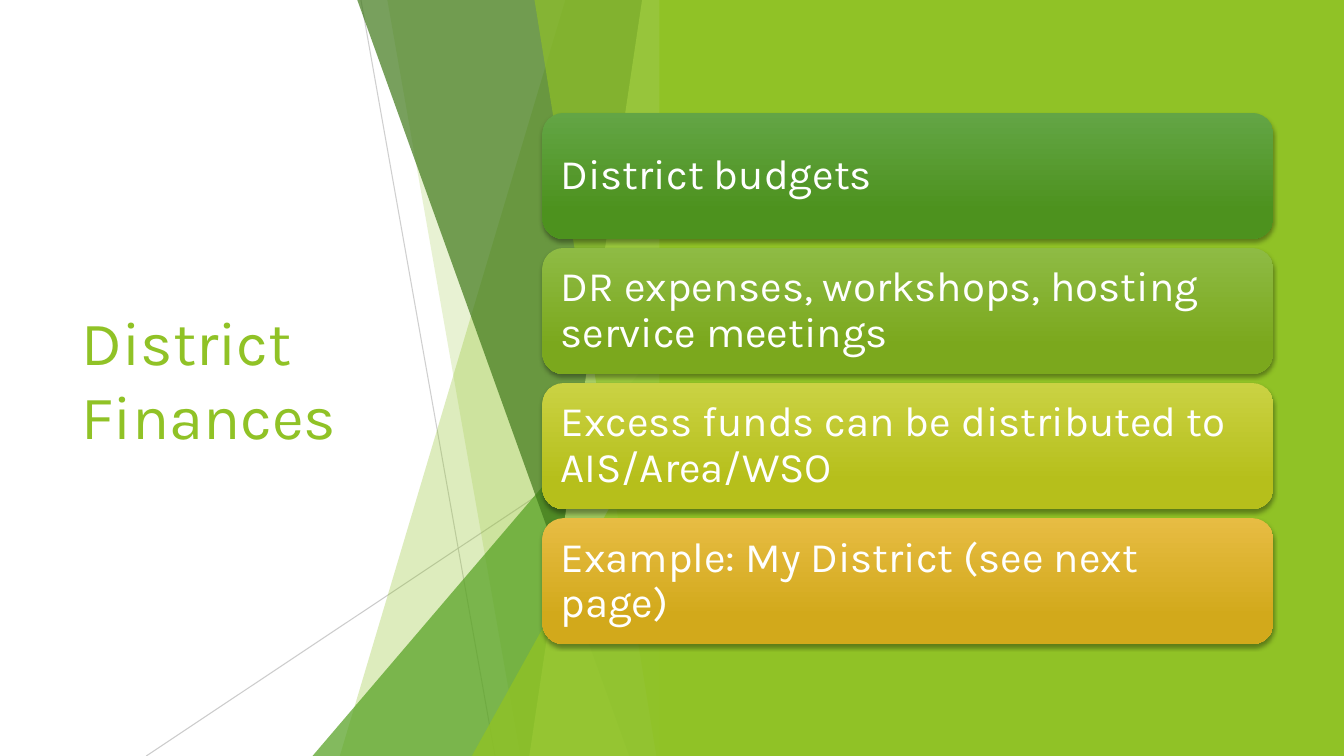
from lxml.etree import SubElement
from pptx import Presentation
from pptx.dml.color import RGBColor
from pptx.enum.shapes import MSO_CONNECTOR, MSO_SHAPE
from pptx.enum.text import MSO_ANCHOR, MSO_AUTO_SIZE, PP_ALIGN
from pptx.oxml.ns import qn
from pptx.util import Inches, Pt

FONT = "Karla"
LIME = "90C226"
WHITE = "FFFFFF"
WIDTH, HEIGHT = 13.33, 7.5
FACET_RIGHT = 6.66


def color(value):
    return RGBColor.from_string(value)


def set_opacity(shape, percent):
    for node in shape.element.spPr.iter(qn("a:srgbClr")):
        SubElement(node, qn("a:alpha"), val=str(percent * 1000))


class SlideBuilder:
    """Holds the page and its style, and draws each kind of element."""

    def __init__(self, page):
        self.page = page
        self.shapes = page.shapes

    def add_text(self, frame, text, size, text_color):
        frame.word_wrap = True
        frame.auto_size = MSO_AUTO_SIZE.NONE
        frame.vertical_anchor = MSO_ANCHOR.MIDDLE
        para = frame.paragraphs[0]
        para.alignment = PP_ALIGN.LEFT
        span = para.add_run()
        span.text = text
        span.font.name = FONT
        span.font.size = Pt(size)
        span.font.color.rgb = color(text_color)
        return para

    def title(self, text, left, top, width, height):
        box = self.shapes.title
        box.left, box.top = Inches(left), Inches(top)
        box.width, box.height = Inches(width), Inches(height)
        self.add_text(box.text_frame, text, 44, LIME)

    def paint(self, shape, fill, opacity=100):
        shape.shadow.inherit = False
        shape.fill.solid()
        shape.fill.fore_color.rgb = color(fill)
        shape.line.fill.background()
        if opacity < 100:
            set_opacity(shape, opacity)

    def preset(self, kind, left, top, width, height):
        return self.shapes.add_shape(
            kind, Inches(left), Inches(top), Inches(width), Inches(height))

    def hairline(self, start, end, opacity):
        line = self.shapes.add_connector(
            MSO_CONNECTOR.STRAIGHT, *(Inches(v) for v in (*start, *end)))
        line.line.width = Pt(0.75)
        line.line.color.rgb = color("BFBFBF")
        set_opacity(line, opacity)
        SubElement(line.element.spPr, qn("a:effectLst"))

    def facet(self, top_left, bottom_left, fill, opacity):
        """Full-height band with a slanted left edge."""
        top = -0.01
        corners = [(top_left, top), (FACET_RIGHT, top),
                   (FACET_RIGHT, HEIGHT), (bottom_left, HEIGHT)]
        points = [(Inches(x), Inches(y)) for x, y in corners]
        builder = self.shapes.build_freeform(*points[0])
        builder.add_line_segments(points[1:], close=True)
        self.paint(builder.convert_to_shape(), fill, opacity)

    def corner(self, left, top, fill, opacity):
        """Triangle rising to the right, standing on the bottom edge."""
        shape = self.preset(MSO_SHAPE.ISOSCELES_TRIANGLE, left, top,
                            FACET_RIGHT - left, HEIGHT - top)
        shape.adjustments[0] = 1
        self.paint(shape, fill, opacity)

    def panel(self, left, fill):
        self.paint(self.preset(MSO_SHAPE.RECTANGLE, left, 0,
                               WIDTH - left, HEIGHT), fill)

    def card(self, text, left, top, width, height, light, dark):
        shape = self.preset(MSO_SHAPE.ROUNDED_RECTANGLE, left, top, width, height)
        shape.line.fill.background()
        shape.fill.gradient()
        shape.fill.gradient_angle = 270
        stops = zip(shape.fill.gradient_stops, (0, 0.78), (light, dark))
        for stop, position, value in stops:
            stop.position = position
            stop.color.rgb = color(value)

        # Soft shadow straight below
        shape.shadow.inherit = False
        effects = shape.element.spPr.find(qn("a:effectLst"))
        shadow = SubElement(effects, qn("a:outerShdw"), blurRad=str(Pt(3)),
                            dist=str(Pt(2)), dir="5400000", rotWithShape="0")
        black = SubElement(shadow, qn("a:srgbClr"), val="000000")
        SubElement(black, qn("a:alpha"), val="35000")

        frame = shape.text_frame
        frame.margin_left = frame.margin_right = Inches(0.12)
        frame.margin_top = frame.margin_bottom = Inches(0.12)
        self.add_text(frame, text, 30, WHITE).line_spacing = 0.9


CARDS = [
    ("District budgets", "63A545", "4D921E"),
    ("DR expenses, workshops, hosting service meetings", "8EBB44", "7BA81D"),
    ("Excess funds can be distributed to AIS/Area/WSO", "CAD243", "B6BF1B"),
    ("Example: My District (see next page)", "E7BC43", "D2A91B"),
]


def main():
    deck = Presentation()
    deck.slide_width, deck.slide_height = Inches(WIDTH), Inches(HEIGHT)
    slide = SlideBuilder(deck.slides.add_slide(deck.slide_layouts[5]))

    slide.title("District Finances", 0.71, 1.51, 3.88, 4.48)

    # Layered facets, back to front
    slide.hairline((3.58, 0), (4.91, HEIGHT), 75)
    slide.hairline((FACET_RIGHT, 4.03), (1.45, HEIGHT), 80)
    slide.facet(5.61, 3.37, LIME, 30)
    slide.facet(3.84, 5.16, LIME, 20)
    slide.corner(3.1, 3.33, "54A021", 72)
    slide.facet(3.54, 6.24, "3F7819", 70)
    slide.facet(6.37, 5.25, "C0E474", 70)
    slide.facet(5.3, 6.51, LIME, 65)
    slide.corner(4.68, 3.93, LIME, 80)
    slide.panel(6.54, LIME)

    # Stack of cards
    first_top, pitch = 1.12, 1.34
    for index, (text, light, dark) in enumerate(CARDS):
        slide.card(text, 5.38, first_top + index * pitch, 7.25, 1.25, light, dark)

    deck.save("out.pptx")


if __name__ == "__main__":
    main()
